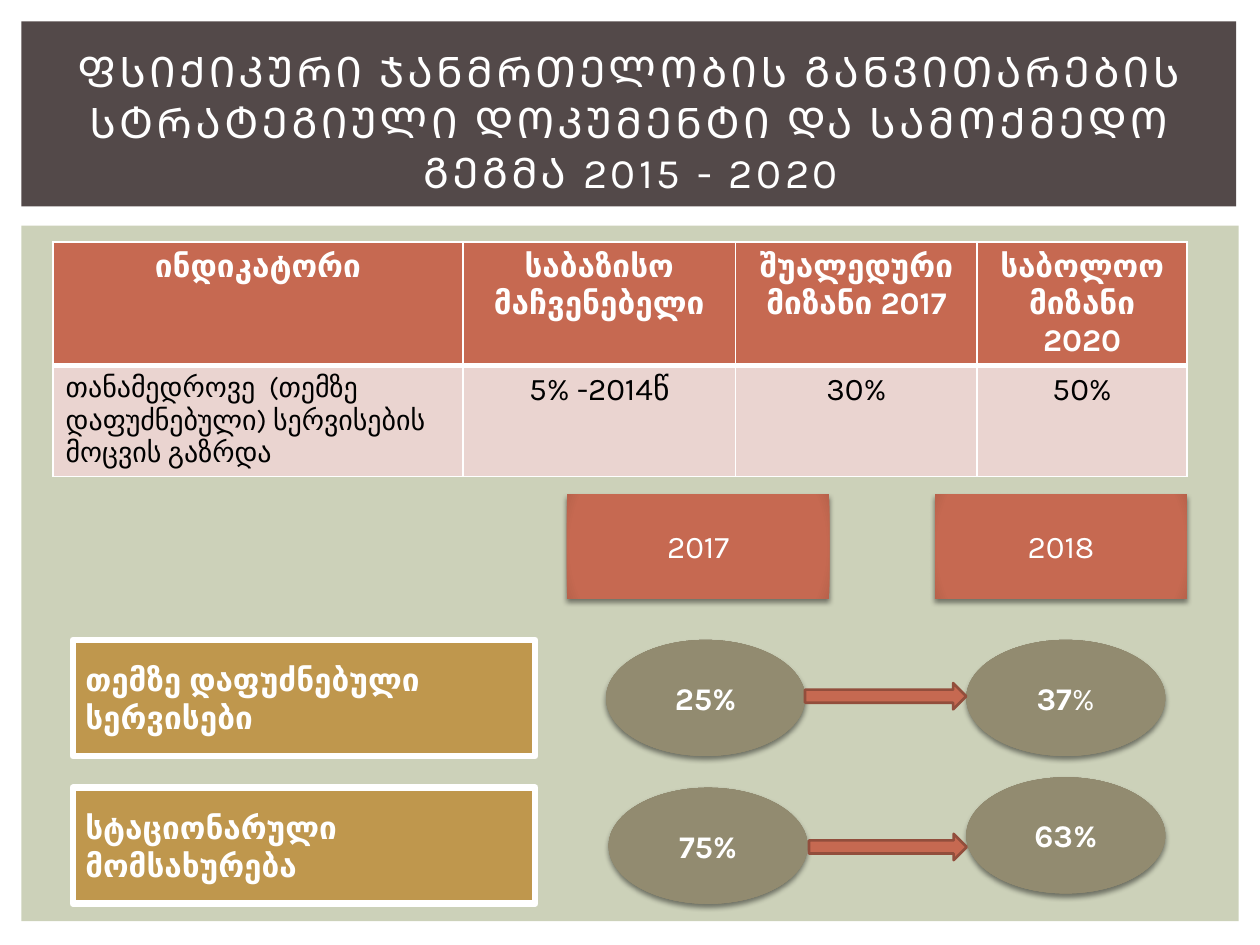
import pptx
import pptx.util
import pptx.oxml
import pptx.oxml.ns
from pptx.dml.color import RGBColor
from pptx.enum.shapes import MSO_SHAPE
from pptx.enum.text import MSO_ANCHOR, MSO_AUTO_SIZE, PP_ALIGN
from pptx.util import Cm

FONT = "Karla"
WHITE = RGBColor(0xFF, 0xFF, 0xFF)
BLACK = RGBColor(0, 0, 0)
SAGE = RGBColor(0xCC, 0xD1, 0xB9)
BROWN = RGBColor(0x53, 0x49, 0x49)
RUST = RGBColor(0xC6, 0x69, 0x51)
RUST_EDGE = RGBColor(0xB8, 0x62, 0x4B)
RUST_LINE = RGBColor(0x92, 0x4E, 0x3C)
BLUSH = RGBColor(0xEA, 0xD4, 0xD0)
GOLD = RGBColor(0xBF, 0x97, 0x4D)
OLIVE = RGBColor(0x92, 0x8B, 0x70)
OLIVE_EDGE = RGBColor(0x88, 0x82, 0x68)

TITLE = "ᲤᲡᲘᲥᲘᲙᲣᲠᲘ ᲯᲐᲜᲛᲠᲗᲔᲚᲝᲑᲘᲡ ᲒᲐᲜᲕᲘᲗᲐᲠᲔᲑᲘᲡ ᲡᲢᲠᲐᲢᲔᲒᲘᲣᲚᲘ ᲓᲝᲙᲣᲛᲔᲜᲢᲘ ᲓᲐ ᲡᲐᲛᲝᲥᲛᲔᲓᲝ ᲒᲔᲒᲛᲐ 2015 - 2020"
INDICATORS = [
    ["ინდიკატორი", "საბაზისო მაჩვენებელი", "შუალედური მიზანი 2017", "საბოლოო მიზანი 2020"],
    ["თანამედროვე  (თემზე დაფუძნებული) სერვისების მოცვის გაზრდა", "5% -2014წ", "30%", "50%"],
]
COLUMN_WIDTHS = [8.26, 5.5, 4.87, 4.23]
ROW_HEIGHTS = [1.98, 1.4]
YEARS = [("2017", 11.43, 5.29), ("2018", 18.85, 5.08)]
SERVICES = [
    ("თემზე დაფუძნებული  სერვისები", 12.9,
     [(12.22, 12.9, [("25%", True)]), (19.48, 12.9, [("37", True), ("%", False)])],
     (16.23, 13.77, 3.25)),
    ("სტაციონარული მომსახურება", 15.88,
     [(12.27, 15.88, [("75%", True)]), (19.48, 15.67, [("63%", True)])],
     (16.31, 16.81, 3.18)),
]


def drawing_xml(body):
    """Parse a DrawingML element whose opening tag ends with a space."""
    return pptx.oxml.parse_xml(body.replace(" ", " " + pptx.oxml.ns.nsdecls("a") + " ", 1))


def write(frame, runs, size=18, color=WHITE, align=PP_ALIGN.CENTER):
    """Write (text, bold) runs into the first paragraph and return it."""
    frame.word_wrap = True
    paragraph = frame.paragraphs[0]
    paragraph.alignment = align
    for text, bold in runs:
        run = paragraph.add_run()
        run.text = text
        run.font.name = FONT
        run.font.size = pptx.util.Pt(size)
        run.font.bold = bold
        run.font.color.rgb = color
    return paragraph


def add_box(slide, kind, place, fill, line=None, line_width=1.5):
    """Add a flat preset shape at a place given in centimetres."""
    box = slide.shapes.add_shape(kind, *(Cm(length) for length in place))
    box.shadow.inherit = False
    box.fill.solid()
    box.fill.fore_color.rgb = fill
    if line is None:
        box.line.fill.background()
    else:
        box.line.color.rgb = line
        box.line.width = pptx.util.Pt(line_width)
    box.text_frame.vertical_anchor = MSO_ANCHOR.MIDDLE
    return box


def add_raised(slide, kind, place, color, edge, runs):
    """Add a shape with darkened edges, a soft shadow and centred text."""
    raised = add_box(slide, kind, place, color)
    properties = raised._element.spPr
    solid = properties.find(pptx.oxml.ns.qn("a:solidFill"))
    stops = "".join(f'<a:gs pos="{position}"><a:srgbClr val="{shade}"/></a:gs>'
                    for position, shade in ((0, color), (90000, color), (100000, edge)))
    properties.replace(solid, drawing_xml(
        f'<a:gradFill rotWithShape="1"><a:gsLst>{stops}</a:gsLst><a:path path="circle">'
        '<a:fillToRect l="100000" t="100000" r="100000" b="100000"/></a:path></a:gradFill>'))
    properties.find(pptx.oxml.ns.qn("a:effectLst")).append(drawing_xml(
        '<a:outerShdw blurRad="38100" dist="25400" dir="5400000" rotWithShape="0">'
        '<a:srgbClr val="000000"><a:alpha val="45000"/></a:srgbClr></a:outerShdw>'))
    write(raised.text_frame, runs)


def add_title(slide):
    """Lay the title over its dark band and the content panel."""
    title = slide.shapes.title
    panel = add_box(slide, MSO_SHAPE.RECTANGLE, (0.43, 4.55, 24.54, 14.02), SAGE)
    band = add_box(slide, MSO_SHAPE.RECTANGLE, (0.43, 0.43, 24.49, 3.73), BROWN)
    for backdrop in (panel, band):
        title._element.addprevious(backdrop._element)
    title.left, title.top, title.width, title.height = Cm(1.07), Cm(0.99), Cm(23.29), Cm(2.92)
    title.text_frame.auto_size = MSO_AUTO_SIZE.NONE
    title.text_frame.vertical_anchor = MSO_ANCHOR.MIDDLE
    heading = write(title.text_frame, [(TITLE, False)], size=24)
    heading.runs[0]._r.get_or_add_rPr().set("spc", "200")


def set_borders(cell, widths):
    """Give a cell white borders with point widths per side."""
    properties = cell._tc.get_or_add_tcPr()
    for index, (side, width) in enumerate(widths.items()):
        properties.insert(index, drawing_xml(
            f'<a:ln{side} w="{width * 12700}"><a:solidFill><a:srgbClr val="{WHITE}"/>'
            f'</a:solidFill></a:ln{side}>'))


def add_indicators(slide):
    """Add the table of the indicator and its targets."""
    table = slide.shapes.add_table(
        len(ROW_HEIGHTS), len(COLUMN_WIDTHS), Cm(1.07), Cm(4.88),
        Cm(sum(COLUMN_WIDTHS)), Cm(sum(ROW_HEIGHTS))).table
    for column, width in zip(table.columns, COLUMN_WIDTHS):
        column.width = Cm(width)
    for row_index, (row, height) in enumerate(zip(table.rows, ROW_HEIGHTS)):
        row.height = Cm(height)
        header = row_index == 0
        for column_index, cell in enumerate(row.cells):
            description = not header and column_index == 0
            cell.fill.solid()
            cell.fill.fore_color.rgb = RUST if header else BLUSH
            set_borders(cell, {"L": 1, "R": 1, "T": 1 if header else 3, "B": 3 if header else 1})
            write(cell.text_frame, [(INDICATORS[row_index][column_index], header)],
                  size=16 if description else 18, color=WHITE if header else BLACK,
                  align=PP_ALIGN.LEFT if description else PP_ALIGN.CENTER)


def add_service(slide, name, top, shares, arrow):
    """Add a service label with its two shares and the arrow between them."""
    label = add_box(slide, MSO_SHAPE.RECTANGLE, (1.47, top, 9.32, 2.34), GOLD, WHITE, 3.75)
    write(label.text_frame, [(name, True)], align=PP_ALIGN.LEFT)
    for left, share_top, runs in shares:
        add_raised(slide, MSO_SHAPE.OVAL, (left, share_top, 4.01, 2.34), OLIVE, OLIVE_EDGE, runs)
    add_box(slide, MSO_SHAPE.RIGHT_ARROW, (*arrow, 0.53), RUST, RUST_LINE)


def main():
    """Build the slide and save it."""
    deck = pptx.Presentation()
    deck.slide_width, deck.slide_height = Cm(25.4), Cm(19.05)
    slide = deck.slides.add_slide(deck.slide_layouts[5])
    add_title(slide)
    add_indicators(slide)
    for year, left, width in YEARS:
        add_raised(slide, MSO_SHAPE.RECTANGLE, (left, 9.96, width, 2.11),
                   RUST, RUST_EDGE, [(year, False)])
    for service in SERVICES:
        add_service(slide, *service)
    deck.save("out.pptx")


if __name__ == "__main__":
    main()
